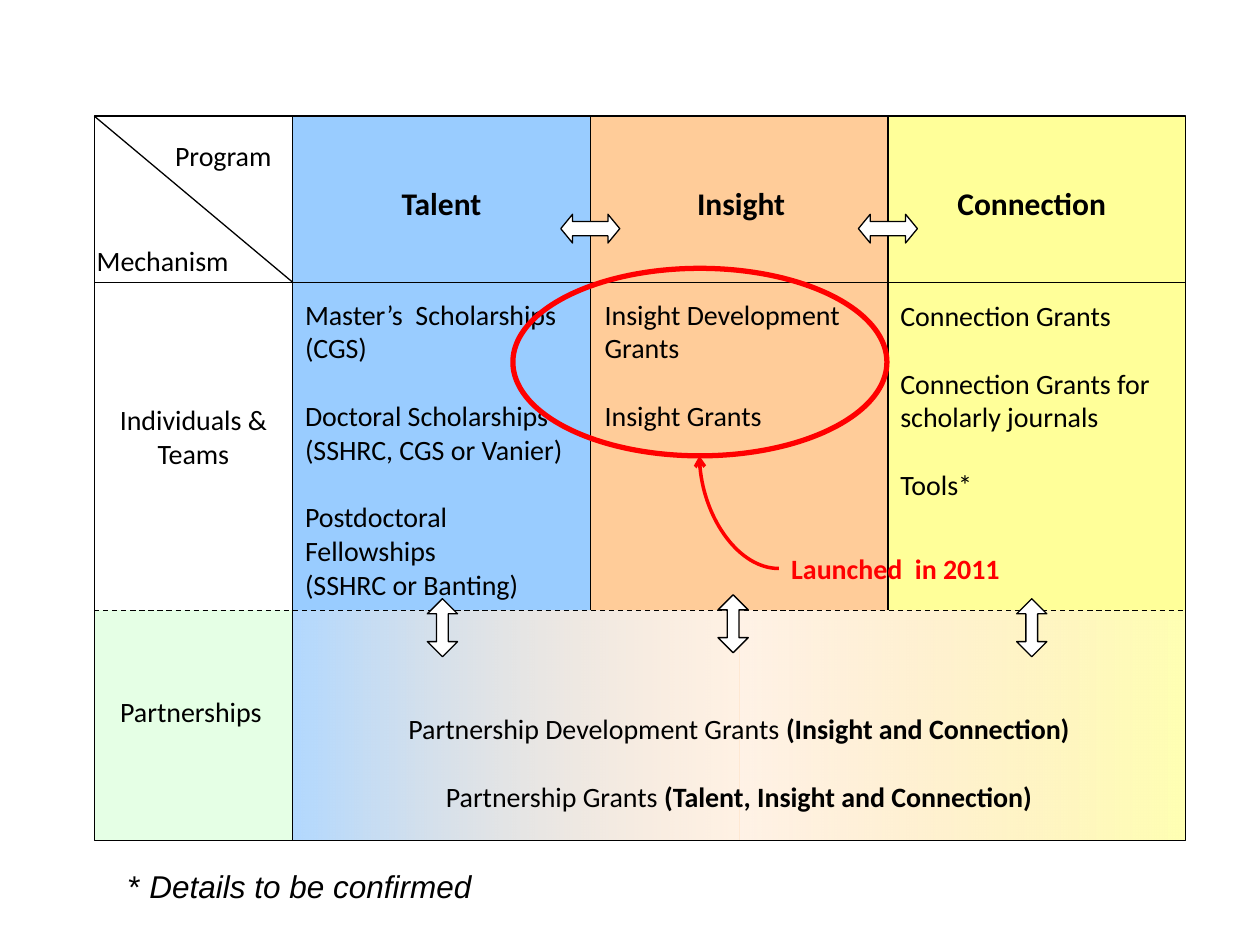
import pptx
import pptx.util
import pptx.dml.color
import pptx.enum.dml
import pptx.enum.shapes
import pptx.enum.text
from lxml import etree

Cm, Pt = pptx.util.Cm, pptx.util.Pt
RGBColor = pptx.dml.color.RGBColor
SHAPE = pptx.enum.shapes.MSO_SHAPE
CONNECTOR = pptx.enum.shapes.MSO_CONNECTOR
ALIGN = pptx.enum.text.PP_ALIGN
AUTO_SIZE = pptx.enum.text.MSO_AUTO_SIZE

BLACK = RGBColor(0x00, 0x00, 0x00)
WHITE = RGBColor(0xFF, 0xFF, 0xFF)
RED = RGBColor(0xFF, 0x00, 0x00)
GREEN = RGBColor(0xCC, 0xFF, 0xCC)
BLUE = RGBColor(0x99, 0xCC, 0xFF)
ORANGE = RGBColor(0xFF, 0xCC, 0x99)
YELLOW = RGBColor(0xFF, 0xFF, 0x99)

# Lengths are in centimetres. Each program has its heading, its grants as
# groups of lines, the lefts and top of these texts, and the place of the
# arrow that joins it to the partnerships.
PROGRAMS = [
    dict(name="Talent", colour=BLUE, name_left=5.9, grants_at=(5.9, 5.87), arrow_at=(8.92, 12.07),
         grants=[["Master’s  Scholarships (CGS)"],
                 ["Doctoral Scholarships (SSHRC, CGS or Vanier)"],
                 ["Postdoctoral Fellowships", "(SSHRC or Banting)"]]),
    dict(name="Insight", colour=ORANGE, name_left=11.94, grants_at=(11.94, 5.87), arrow_at=(14.78, 11.99),
         grants=[["Insight Development Grants"], ["Insight Grants"]]),
    dict(name="Connection", colour=YELLOW, name_left=17.8, grants_at=(17.9, 5.89), arrow_at=(20.8, 12.07),
         grants=[["Connection Grants"],
                 ["Connection Grants for scholarly journals"],
                 ["Tools*"]]),
]
PARTNERSHIP_GRANTS = [
    [[("Partnership Development Grants ", ""), ("(Insight and Connection)", "b")]],
    [[("Partnership Grants ", ""), ("(Talent, Insight and Connection)", "b")]],
]
PARTNERSHIP_FADES = [((BLUE, 75), (ORANGE, 26)), ((ORANGE, 24), (YELLOW, 75))]
FOOTNOTE = [[[("* ", ""), ("Details to be confirmed", "i")]]]

LEFT, LABEL_WIDTH, PROGRAM_WIDTH = 1.9, 4.0, 6.0
EDGES = [LEFT + LABEL_WIDTH + i * PROGRAM_WIDTH for i in range(len(PROGRAMS) + 1)]
RIGHT = EDGES[-1]
TOP, MECHANISM_TOP, PARTNERSHIP_TOP, BOTTOM = 2.34, 5.69, 12.3, 16.94
GROUP_GAP = 19.5

deck = pptx.Presentation()
deck.slide_width, deck.slide_height = Cm(25.4), Cm(19.05)
slide = deck.slides.add_slide(deck.slide_layouts[6])


def set_alpha(shape, *percents):
    colours = shape._element.spPr.iter(pptx.oxml.ns.qn("a:srgbClr"))
    for colour, percent in zip(colours, percents):
        etree.SubElement(colour, pptx.oxml.ns.qn("a:alpha")).set("val", str(percent * 1000))


def add_shape(kind, left, top, width, height, fill=None, line=None, weight=0.75):
    shape = slide.shapes.add_shape(kind, Cm(left), Cm(top), Cm(width), Cm(height))
    shape.shadow.inherit = False
    if fill is None:
        shape.fill.background()
    else:
        shape.fill.solid()
        shape.fill.fore_color.rgb = fill
    if line is None:
        shape.line.fill.background()
    else:
        shape.line.color.rgb = line
        shape.line.width = Pt(weight)
    return shape


def add_fade(left, width, stops):
    """Add a partnership panel that runs from one colour to the next."""
    panel = add_shape(SHAPE.RECTANGLE, left, PARTNERSHIP_TOP, width, BOTTOM - PARTNERSHIP_TOP)
    panel.fill.gradient()
    panel.fill.gradient_angle = 0
    for stop, (colour, _) in zip(panel.fill.gradient_stops, stops):
        stop.color.rgb = colour
    set_alpha(panel, *(alpha for _, alpha in stops))


def add_line(start, end, colour=BLACK, weight=0.75, kind=CONNECTOR.STRAIGHT):
    line = slide.shapes.add_connector(kind, *(Cm(v) for v in (*start, *end)))
    line.line.color.rgb = colour
    line.line.width = Pt(weight)
    etree.SubElement(line._element.spPr, pptx.oxml.ns.qn("a:effectLst"))
    return line


def add_arrow(kind, centre, top, width, height, head):
    arrow = add_shape(kind, centre - width / 2, top, width, height, WHITE, BLACK)
    arrow.adjustments[0], arrow.adjustments[1] = 0.5, head


def add_text(text, left, top, width, height, size=16, font="Calibri", colour=BLACK,
             bold=False, align=ALIGN.LEFT, wrap=True):
    """Add a string, or groups of paragraphs that are strings or (text, style) runs."""
    box = slide.shapes.add_textbox(Cm(left), Cm(top), Cm(width), Cm(height))
    frame = box.text_frame
    frame.word_wrap = wrap
    frame.auto_size = AUTO_SIZE.SHAPE_TO_FIT_TEXT
    groups = [[text]] if isinstance(text, str) else text
    for g, group in enumerate(groups):
        for i, content in enumerate(group):
            first = g == 0 and i == 0
            paragraph = frame.paragraphs[0] if first else frame.add_paragraph()
            paragraph.alignment = align
            if g and i == 0:
                paragraph.space_before = Pt(GROUP_GAP)
            for words, style in [(content, "")] if isinstance(content, str) else content:
                run = paragraph.add_run()
                run.text = words
                run.font.name, run.font.size = font, Pt(size)
                run.font.color.rgb = colour
                run.font.bold = bold or style == "b"
                run.font.italic = style == "i"


# Coloured areas
partnerships = add_shape(SHAPE.RECTANGLE, LEFT, PARTNERSHIP_TOP, LABEL_WIDTH,
                         BOTTOM - PARTNERSHIP_TOP, GREEN)
set_alpha(partnerships, 50)
for program, edge in zip(PROGRAMS, EDGES):
    add_shape(SHAPE.RECTANGLE, edge, TOP, PROGRAM_WIDTH, PARTNERSHIP_TOP - TOP, program["colour"])
fade_width = (RIGHT - EDGES[0]) / len(PARTNERSHIP_FADES)
for i, stops in enumerate(PARTNERSHIP_FADES):
    add_fade(EDGES[0] + i * fade_width, fade_width, stops)

# Grid
add_line((LEFT, MECHANISM_TOP), (RIGHT, MECHANISM_TOP))
add_line((LEFT, TOP), (EDGES[0], MECHANISM_TOP))
divider = add_line((LEFT, PARTNERSHIP_TOP), (RIGHT, PARTNERSHIP_TOP))
divider.line.dash_style = pptx.enum.dml.MSO_LINE.DASH
add_shape(SHAPE.RECTANGLE, LEFT, TOP, RIGHT - LEFT, BOTTOM - TOP, line=BLACK)
for edge, bottom in zip(EDGES, (BOTTOM, PARTNERSHIP_TOP, PARTNERSHIP_TOP)):
    add_line((edge, TOP), (edge, bottom))

# Row and column labels
add_text("Program", 3.28, 2.67, 2.49, 0.94, wrap=False)
add_text("Mechanism", 1.7, 4.78, 3.18, 0.94, wrap=False)
add_text("Individuals & Teams", LEFT, 8, LABEL_WIDTH, 1.63, align=ALIGN.CENTER)
add_text("Partnerships", 1.85, 13.87, LABEL_WIDTH, 0.94, align=ALIGN.CENTER)

# Grants and the arrows between areas
for program in PROGRAMS:
    add_text(program["name"], program["name_left"], 3.58, PROGRAM_WIDTH, 1.02,
             size=18, bold=True, align=ALIGN.CENTER)
    add_text(program["grants"], *program["grants_at"], PROGRAM_WIDTH, 6.4)
    add_arrow(SHAPE.UP_DOWN_ARROW, *program["arrow_at"], 0.61, 1.17, 0.388)
add_text(PARTNERSHIP_GRANTS, EDGES[0], 14.22, RIGHT - EDGES[0], 2.29, align=ALIGN.CENTER)
for edge in EDGES[1:-1]:
    add_arrow(SHAPE.LEFT_RIGHT_ARROW, edge, 4.32, 1.19, 0.58, 0.412)

# Footnote and launch callout
add_text(FOOTNOTE, 2.34, 17.35, 7.42, 1.02, size=18, font="Arial", wrap=False)
add_shape(SHAPE.OVAL, 10.34, 5.41, 7.54, 3.78, line=RED, weight=3)
add_text("Launched  in 2011", 15.7, 11, 4.78, 0.94, colour=RED, bold=True, wrap=False)
pointer = add_line((14.1, 9.19), (15.7, 11.46), RED, 2, CONNECTOR.CURVE)
pointer_format = pointer._element.spPr
pointer_format.find(pptx.oxml.ns.qn("a:prstGeom")).set("prst", "curvedConnector2")
pointer_format.find(pptx.oxml.ns.qn("a:xfrm")).set("rot", str(180 * 60000))
etree.SubElement(pointer_format.find(pptx.oxml.ns.qn("a:ln")),
                 pptx.oxml.ns.qn("a:tailEnd")).set("type", "arrow")

deck.save("out.pptx")
